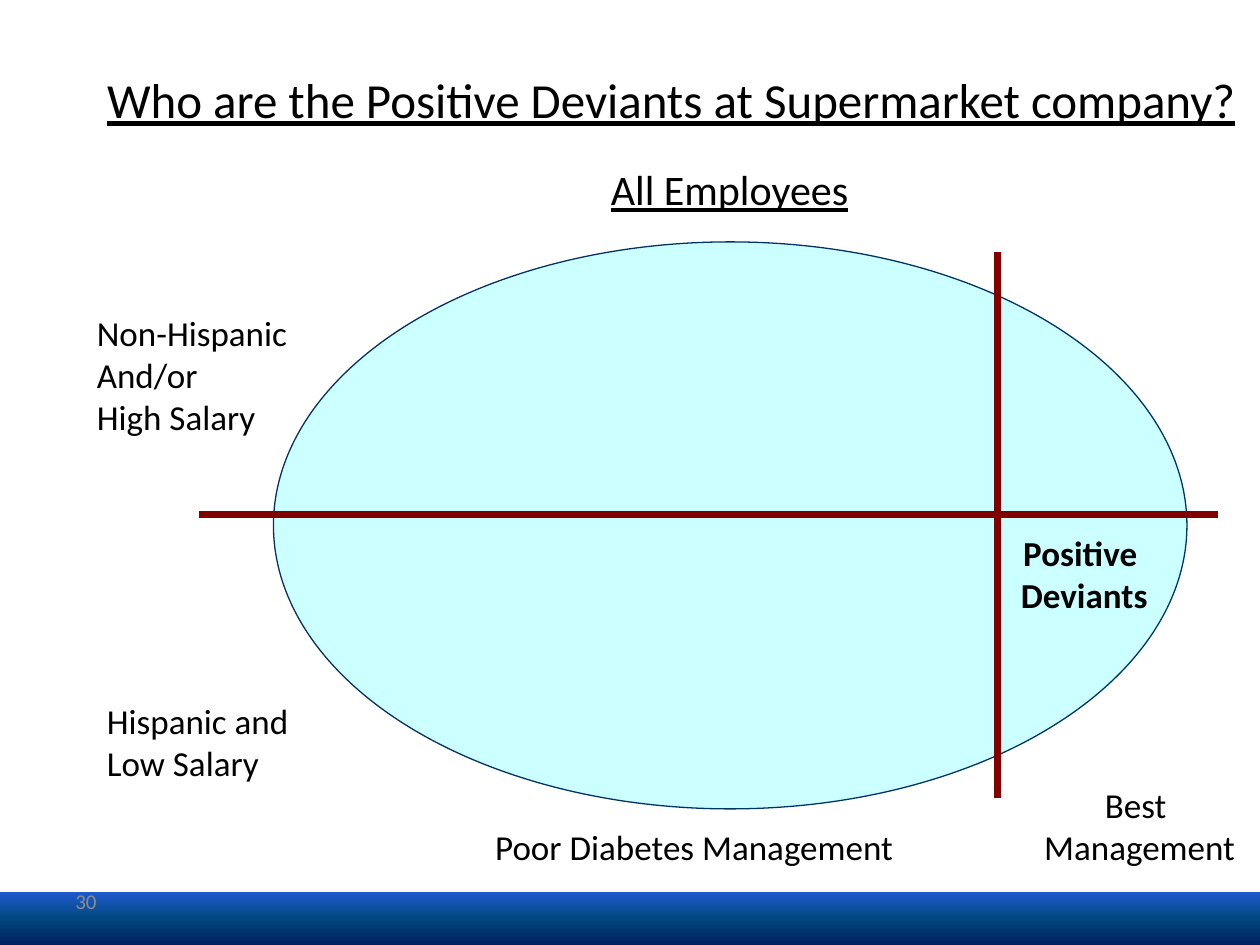
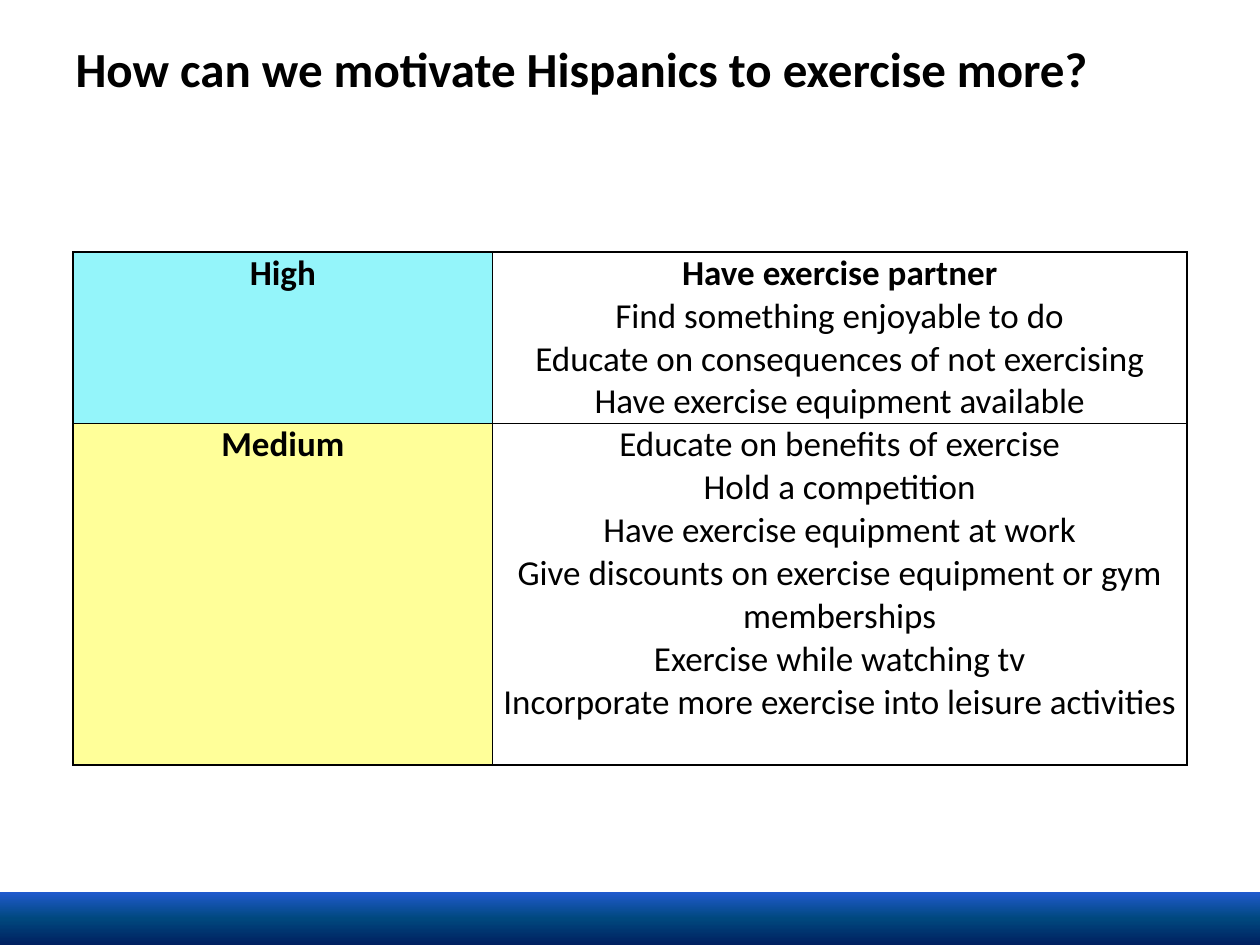
"""Build two slides on positive deviants and motivation to exercise."""
from copy import deepcopy

from lxml import etree
from pptx import Presentation
from pptx.dml.color import RGBColor
from pptx.enum.shapes import MSO_CONNECTOR, MSO_SHAPE
from pptx.enum.text import MSO_ANCHOR, MSO_AUTO_SIZE, PP_ALIGN
from pptx.oxml.ns import qn
from pptx.util import Inches, Pt

LEFT, CENTER = PP_ALIGN.LEFT, PP_ALIGN.CENTER
TOP, MIDDLE = MSO_ANCHOR.TOP, MSO_ANCHOR.MIDDLE
RECTANGLE, OVAL = MSO_SHAPE.RECTANGLE, MSO_SHAPE.OVAL
STRAIGHT = MSO_CONNECTOR.STRAIGHT
NO_FIT, GROW = MSO_AUTO_SIZE.NONE, MSO_AUTO_SIZE.SHAPE_TO_FIT_TEXT

FONT = "Calibri"
BLACK, WHITE, GREY = "000000", "FFFFFF", "8C8C8C"
BAND_STOPS = [(0, "205ACE"), (0.5, "00487E"), (1, "002060")]
OVAL_FILL, OVAL_LINE, AXIS = "CCFFFF", "003366", "800000"
HIGH_FILL, MEDIUM_FILL = "94F5FA", "FFFF99"

GROUP_LABELS = [
    (4.75, 1.25, 2.16, 0.5, ["All Employees"], dict(size=24, underline=True)),
    (0.67, 2.42, 1.73, 1.11, ["Non-Hispanic", "And/or", "High Salary"], {}),
    (0.75, 5.5, 1.66, 0.77, ["Hispanic and", "Low Salary"], {}),
    (8.18, 6.17, 1.73, 0.77, ["Best ", "Management "], dict(align=CENTER)),
    (3.81, 6.5, 3.4, 0.44, ["Poor Diabetes Management"], dict(align=CENTER)),
    (7.99, 4.17, 1.23, 0.77, ["Positive ", "Deviants"],
     dict(align=CENTER, bold=True)),
]

HIGH_IDEAS = [
    "Have exercise partner",
    "Find something enjoyable to do",
    "Educate on consequences of not exercising",
    "Have exercise equipment available",
]
MEDIUM_IDEAS = [
    "Educate on benefits of exercise",
    "Hold a competition",
    "Have exercise equipment at work",
    "Give discounts on exercise equipment or gym memberships",
    "Exercise while watching tv",
    "Incorporate more exercise into leisure activities",
]


def rgb(value):
    """Return the colour for a hex string."""
    return RGBColor.from_string(value)


def box(left, top, width, height):
    """Return a position and size in inches."""
    return [Inches(v) for v in (left, top, width, height)]


def add_run(p, text, size=20, color=BLACK, bold=False, underline=False):
    """Add one formatted run to a paragraph."""
    r = p.add_run()
    r.text = text
    r.font.name = FONT
    r.font.size = Pt(size)
    r.font.color.rgb = rgb(color)
    r.font.bold = bold
    r.font.underline = underline


def write_lines(tf, lines, align=LEFT, **style):
    """Write each line as a paragraph of the text frame."""
    for i, line in enumerate(lines):
        p = tf.add_paragraph() if i else tf.paragraphs[0]
        p.alignment = align
        add_run(p, line, **style)


def add_band(slide):
    """Draw the gradient band along the foot of the slide."""
    sp = slide.shapes.add_shape(RECTANGLE, *box(0, 7.08, 10, 0.42))
    sp.shadow.inherit = False
    sp.line.fill.background()
    sp.fill.gradient()
    sp.fill.gradient_angle = 270
    stops = sp._element.spPr.find(".//" + qn("a:gsLst"))
    stops.append(deepcopy(stops[0]))
    for stop, (position, color) in zip(sp.fill.gradient_stops, BAND_STOPS):
        stop.position = position
        stop.color.rgb = rgb(color)


def add_slide(prs, title, place, anchor, **style):
    """Add a slide with the shared band and a title."""
    slide = prs.slides.add_slide(prs.slide_layouts[5])
    add_band(slide)
    sp = slide.shapes.title
    sp.left, sp.top, sp.width, sp.height = box(*place)
    tf = sp.text_frame
    tf.auto_size = NO_FIT
    tf.word_wrap = True
    tf.vertical_anchor = anchor
    write_lines(tf, [title], size=28, **style)
    return slide


def add_label(slide, place, lines, **style):
    """Add an unwrapped text box that fits its lines."""
    tf = slide.shapes.add_textbox(*box(*place)).text_frame
    tf.word_wrap = False
    tf.auto_size = GROW
    write_lines(tf, lines, **style)


def add_page_number(slide, number):
    """Add the page number at the lower left."""
    tf = slide.shapes.add_textbox(*box(0.5, 6.95, 2.33, 0.4)).text_frame
    tf.word_wrap = True
    tf.vertical_anchor = MIDDLE
    write_lines(tf, [number], size=12, color=GREY)


def add_oval(slide, place):
    """Draw the oval that holds all employees."""
    sp = slide.shapes.add_shape(OVAL, *box(*place))
    sp.shadow.inherit = False
    sp.fill.solid()
    sp.fill.fore_color.rgb = rgb(OVAL_FILL)
    sp.line.color.rgb = rgb(OVAL_LINE)
    sp.line.width = Pt(0.75)


def add_axis(slide, *ends):
    """Draw a thick dividing line."""
    line = slide.shapes.add_connector(STRAIGHT, *box(*ends))
    line.line.color.rgb = rgb(AXIS)
    line.line.width = Pt(4)
    etree.SubElement(line._element.spPr, qn("a:effectLst"))


def add_borders(cell):
    """Give a cell a thin black line on each side."""
    tc_pr = cell._tc.get_or_add_tcPr()
    for side in ("lnL", "lnR", "lnT", "lnB"):
        ln = etree.SubElement(tc_pr, qn("a:" + side), w=str(Pt(1)))
        fill = etree.SubElement(ln, qn("a:solidFill"))
        etree.SubElement(fill, qn("a:srgbClr"), val=BLACK)


def format_cell(cell, color):
    """Set the borders, fill and margins of a cell."""
    add_borders(cell)
    cell.fill.solid()
    cell.fill.fore_color.rgb = rgb(color)
    cell.margin_left = cell.margin_right = Inches(0.07)
    cell.margin_top = cell.margin_bottom = 0


def add_priority_table(slide, rows):
    """Add a table of priorities and their ideas."""
    frame = slide.shapes.add_table(len(rows), 2, *box(0.58, 2, 8.84, 4.06))
    table = frame.table
    table.first_row = table.horz_banding = False
    for column, width in zip(table.columns, (3.33, 5.51)):
        column.width = Inches(width)
    for i, (height, level, color, ideas, first_bold) in enumerate(rows):
        table.rows[i].height = Inches(height)
        level_cell, ideas_cell = table.cell(i, 0), table.cell(i, 1)
        format_cell(level_cell, color)
        format_cell(ideas_cell, WHITE)
        write_lines(level_cell.text_frame, [level], CENTER, bold=True)
        write_lines(ideas_cell.text_frame, ideas, CENTER)
        ideas_cell.text_frame.paragraphs[0].runs[0].font.bold = first_bold


def build_deviants(prs):
    """Build the slide that divides the employees into groups."""
    slide = add_slide(
        prs, "Who are the Positive Deviants at Supermarket company?",
        (0.75, 0.5, 9.25, 0.57), TOP, underline=True)
    add_page_number(slide, "30")
    add_oval(slide, (2.17, 1.92, 7.25, 4.5))
    add_axis(slide, 1.58, 4.08, 9.67, 4.08)
    add_axis(slide, 7.92, 6.33, 7.92, 2)
    for *place, lines, style in GROUP_LABELS:
        add_label(slide, place, lines, **style)


def build_motivation(prs):
    """Build the slide that ranks ideas for exercise."""
    slide = add_slide(
        prs, "How can we motivate Hispanics to exercise more?",
        (0.5, 0, 9, 1.08), MIDDLE, bold=True)
    add_priority_table(slide, [
        (1.35, "High", HIGH_FILL, HIGH_IDEAS, True),
        (2.71, "Medium", MEDIUM_FILL, MEDIUM_IDEAS, False),
    ])


def main():
    """Build and save the presentation."""
    prs = Presentation()
    prs.slide_width, prs.slide_height = Inches(10), Inches(7.5)
    build_deviants(prs)
    build_motivation(prs)
    prs.save("out.pptx")


if __name__ == "__main__":
    main()
